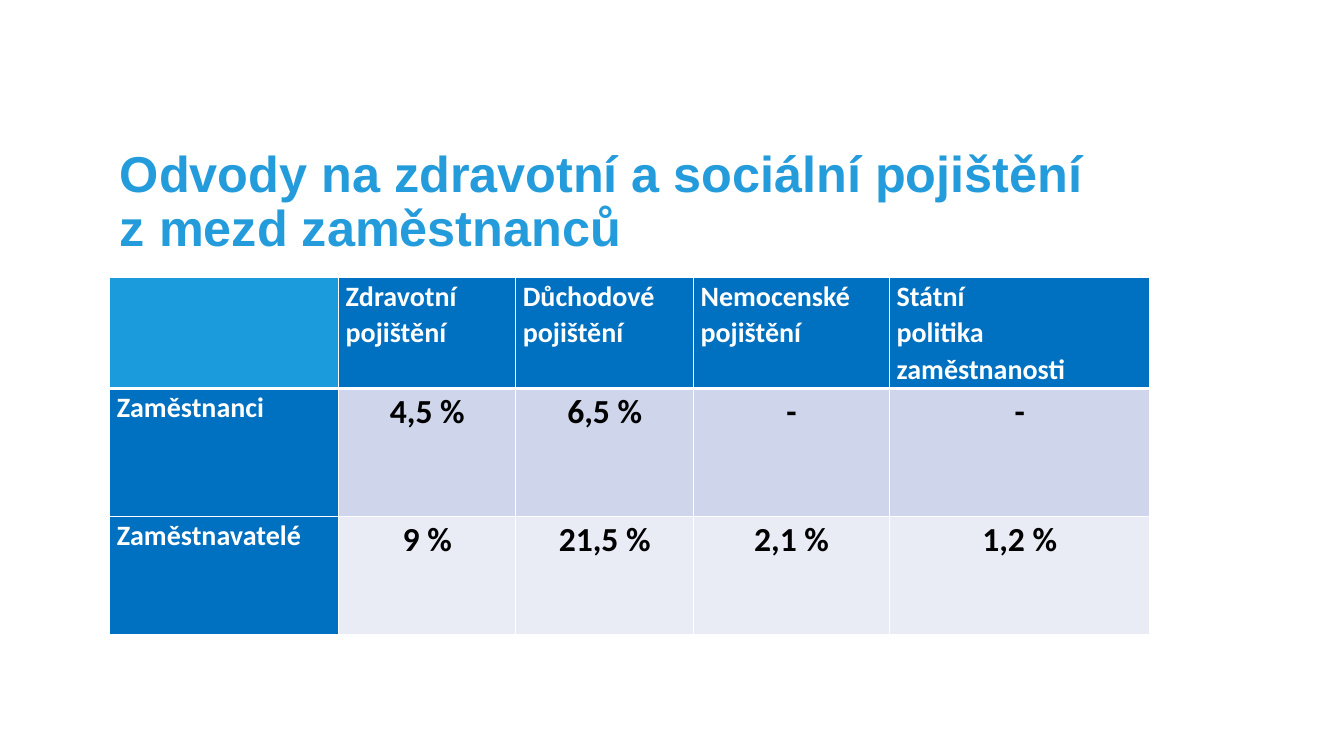
from lxml import etree
from pptx import Presentation
from pptx.dml.color import RGBColor
from pptx.enum import text
from pptx.oxml import ns
from pptx.util import Pt

COLORS = {
    "title": "249CDC",
    "corner": "1B9BDB",
    "header": "0070C0",
    "employees": "CFD5EA",
    "employers": "E9EBF5",
    "white": "FFFFFF",
    "black": "000000",
}
COLUMN_WIDTHS = [163.5, 126.5, 127, 140, 186]
ROW_HEIGHTS = [79.5, 91.5, 84]
ROW_FILLS = ["header", "employees", "employers"]
ROWS = [
    ["", "Zdravotní\npojištění", "Důchodové\npojištění",
     "Nemocenské\npojištění", "Státní\npolitika\nzaměstnanosti"],
    ["Zaměstnanci", "4,5 %", "6,5 %", "-", "-"],
    ["Zaměstnavatelé", "9 %", "21,5 %", "2,1 %", "1,2 %"],
]


def style_paragraph(p, font, size, color, align, spacing):
    """Format a paragraph and its runs in bold."""
    p.alignment = align
    p.line_spacing = spacing
    for r in p.runs:
        r.font.name = font
        r.font.size = Pt(size)
        r.font.bold = True
        r.font.color.rgb = RGBColor.from_string(COLORS[color])


def add_title(s, title):
    """Place the title placeholder and fill it."""
    sp = s.shapes.title
    sp.left, sp.top, sp.width, sp.height = Pt(78.5), Pt(93), Pt(828), Pt(104.5)
    tf = sp.text_frame
    tf.text = title
    tf.word_wrap = True
    tf.auto_size = text.MSO_AUTO_SIZE.NONE
    tf.vertical_anchor = text.MSO_ANCHOR.MIDDLE
    style_paragraph(tf.paragraphs[0], "Arial", 36, "title", text.PP_ALIGN.LEFT, 0.9)


def set_border(cell, side, width):
    """Draw one white cell border."""
    tc_pr = cell._tc.get_or_add_tcPr()
    ln = etree.SubElement(tc_pr, ns.qn(f"a:ln{side}"), w=str(Pt(width)))
    fill = etree.SubElement(ln, ns.qn("a:solidFill"))
    etree.SubElement(fill, ns.qn("a:srgbClr"), val=COLORS["white"])


def fill_cell(cell, value, row, col):
    """Write and format a cell according to its row and column."""
    is_label = row == 0 or col == 0
    for side in "LRTB":
        under_header = (row, side) in [(0, "B"), (1, "T")]
        set_border(cell, side, 3 if under_header else 1)
    fill = "corner" if row == col == 0 else "header" if is_label else ROW_FILLS[row]
    cell.fill.solid()
    cell.fill.fore_color.rgb = RGBColor.from_string(COLORS[fill])
    cell.margin_left = cell.margin_right = Pt(5)
    cell.margin_top = cell.margin_bottom = Pt(0)
    cell.text_frame.text = value
    align = text.PP_ALIGN.LEFT if is_label else text.PP_ALIGN.CENTER
    size, color = (20, "white") if is_label else (24, "black")
    for p in cell.text_frame.paragraphs:
        style_paragraph(p, "Calibri", size, color, align, 1.07)


def add_rates_table(s):
    """Add the table of contribution rates."""
    table = s.shapes.add_table(
        len(ROWS), len(COLUMN_WIDTHS), Pt(78.5), Pt(198),
        Pt(sum(COLUMN_WIDTHS)), Pt(sum(ROW_HEIGHTS))).table
    for column, width in zip(table.columns, COLUMN_WIDTHS):
        column.width = Pt(width)
    for row, height in zip(table.rows, ROW_HEIGHTS):
        row.height = Pt(height)
    for i, values in enumerate(ROWS):
        for j, value in enumerate(values):
            fill_cell(table.cell(i, j), value, i, j)


def main():
    """Build and save the slide."""
    prs = Presentation()
    prs.slide_width, prs.slide_height = Pt(960), Pt(540)
    s = prs.slides.add_slide(prs.slide_layouts[5])
    add_title(s, "Odvody na zdravotní a sociální pojištění\vz mezd zaměstnanců")
    add_rates_table(s)
    prs.save("out.pptx")


if __name__ == "__main__":
    main()
